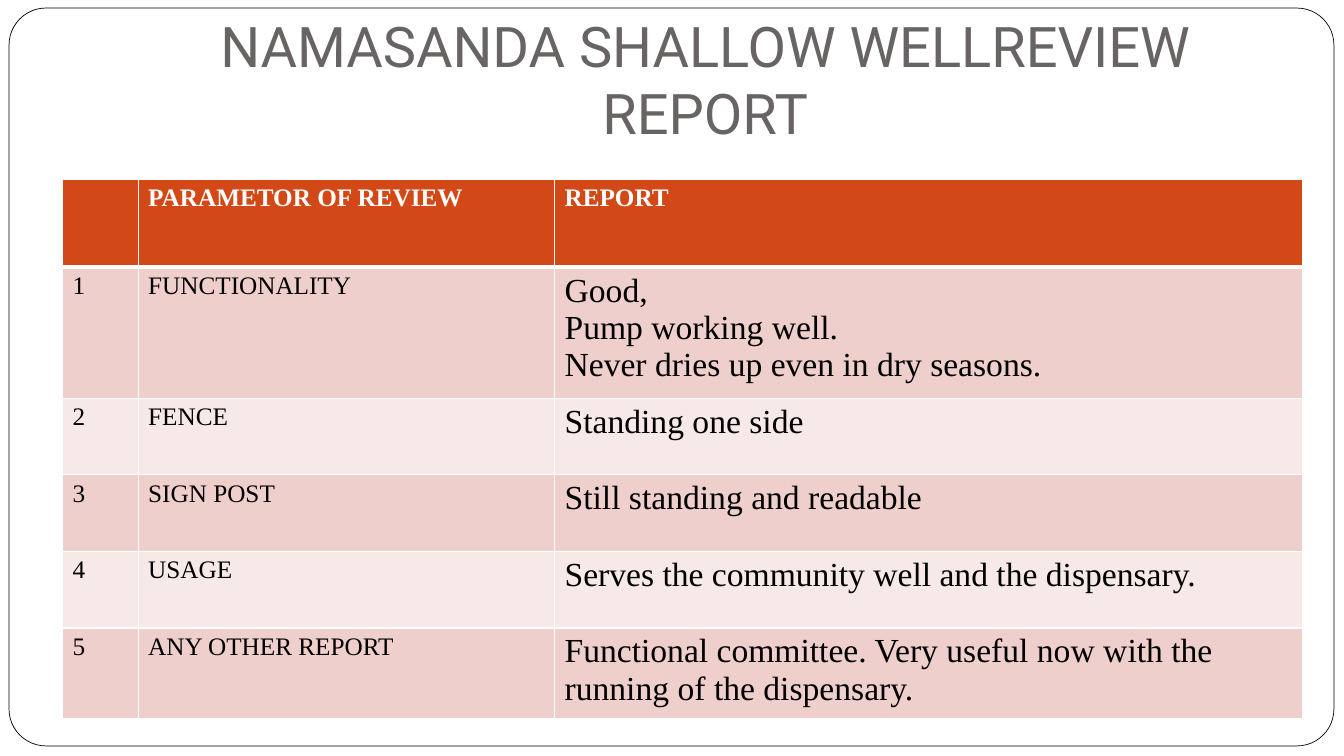
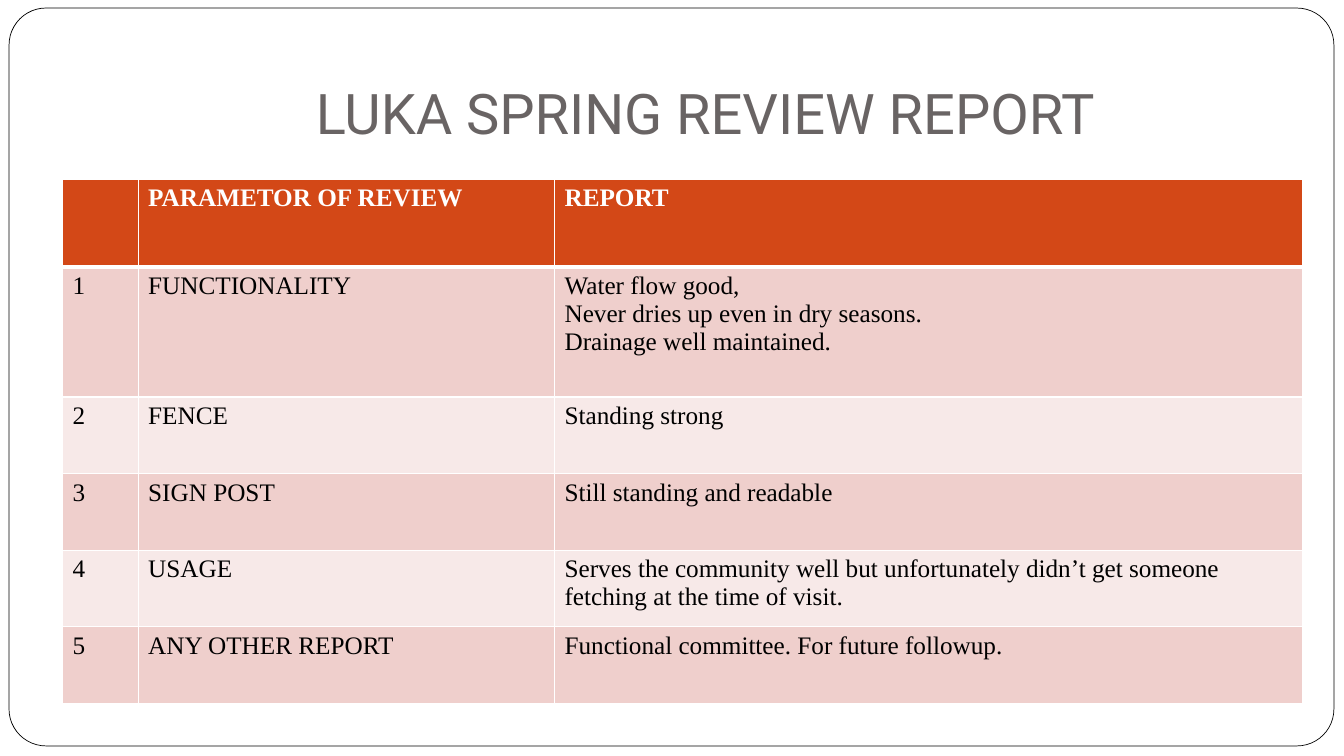
from dataclasses import dataclass

from lxml.etree import SubElement
from pptx import Presentation
from pptx.dml.color import RGBColor
from pptx.enum.shapes import MSO_SHAPE
from pptx.enum.text import MSO_ANCHOR, PP_ALIGN
from pptx.oxml.ns import qn
from pptx.util import Inches, Pt


@dataclass(frozen=True)
class Theme:
    white: str = "FFFFFF"
    black: str = "000000"
    title: str = "696464"
    header: str = "D34817"
    bands: tuple = ("EFCFCC", "F7E9E8")
    title_font: str = "Roboto"
    body_font: str = "Times New Roman"
    title_size: int = 40
    label_size: int = 18
    large_size: int = 24
    grid_line: int = 1
    header_line: int = 3


COLUMNS = (0.75, 4.13, 7.42)
ROWS = (0.87, 1.29, 0.76, 0.76, 0.76, 0.76)
HEADINGS = ("", "PARAMETOR OF REVIEW", "REPORT")
PARAMETERS = ("FUNCTIONALITY", "FENCE", "SIGN POST", "USAGE", "ANY OTHER REPORT")


class Deck:
    def __init__(self, theme):
        self.theme = theme
        self.prs = Presentation()
        self.prs.slide_width = Inches(13.33)
        self.prs.slide_height = Inches(7.5)
        self.s = None

    def add_slide(self):
        self.s = self.prs.slides.add_slide(self.prs.slide_layouts[6])
        self.frame()

    def frame(self):
        """Draw the rounded outline around the slide."""
        sp = self.s.shapes.add_shape(MSO_SHAPE.ROUNDED_RECTANGLE, Inches(0.09),
                                     Inches(0.08), Inches(13.14), Inches(7.32))
        sp.adjustments[0] = 0.05
        sp.shadow.inherit = False
        sp.fill.solid()
        sp.fill.fore_color.rgb = RGBColor.from_string(self.theme.white)
        sp.line.color.rgb = RGBColor.from_string(self.theme.black)
        sp.line.width = Pt(0.5)

    def run(self, p, text, font, size, color, bold=False):
        r = p.add_run()
        r.text = text
        r.font.name = font
        r.font.size = Pt(size)
        r.font.bold = bold
        r.font.color.rgb = RGBColor.from_string(color)

    def title(self, text):
        sp = self.s.shapes.add_textbox(Inches(1.33), Inches(0.3), Inches(11.33), Inches(1.25))
        tf = sp.text_frame
        tf.word_wrap = True
        tf.vertical_anchor = MSO_ANCHOR.BOTTOM
        tf.margin_left = tf.margin_right = tf.margin_bottom = Inches(0.1)
        tf.margin_top = Inches(0.05)
        p = tf.paragraphs[0]
        p.alignment = PP_ALIGN.CENTER
        self.run(p, text, self.theme.title_font, self.theme.title_size, self.theme.title)

    def borders(self, cell, top, bottom):
        """Give a cell white borders; top and bottom are widths in points."""
        tcPr = cell._tc.get_or_add_tcPr()
        side = self.theme.grid_line
        for tag, width in (("lnL", side), ("lnR", side), ("lnT", top), ("lnB", bottom)):
            ln = SubElement(tcPr, qn(f"a:{tag}"), w=str(Pt(width)))
            fill = SubElement(ln, qn("a:solidFill"))
            SubElement(fill, qn("a:srgbClr"), val=self.theme.white)

    def cell(self, cell, row, text, size):
        t = self.theme
        is_header = row == 0
        self.borders(cell, top=t.header_line if row == 1 else t.grid_line,
                     bottom=t.header_line if is_header else t.grid_line)
        cell.fill.solid()
        fill = t.header if is_header else t.bands[(row - 1) % 2]
        cell.fill.fore_color.rgb = RGBColor.from_string(fill)
        if not text:
            return
        tf = cell.text_frame
        for i, line in enumerate(text.split("\n")):
            p = tf.add_paragraph() if i else tf.paragraphs[0]
            self.run(p, line, t.body_font, size, t.white if is_header else t.black, is_header)

    def review_table(self, reports, report_size):
        table = self.s.shapes.add_table(len(ROWS), len(COLUMNS), Inches(0.62), Inches(1.78),
                                        Inches(sum(COLUMNS)), Inches(sum(ROWS))).table
        table.horz_banding = False
        for column, width in zip(table.columns, COLUMNS):
            column.width = Inches(width)
        for row, height in zip(table.rows, ROWS):
            row.height = Inches(height)
        numbers = map(str, range(1, len(PARAMETERS) + 1))
        content = [HEADINGS, *zip(numbers, PARAMETERS, reports)]
        for i, texts in enumerate(content):
            for j, text in enumerate(texts):
                size = report_size if i and j == 2 else self.theme.label_size
                self.cell(table.cell(i, j), i, text, size)


def main():
    theme = Theme()
    deck = Deck(theme)
    reviews = (
        ("NAMASANDA SHALLOW WELLREVIEW REPORT", theme.large_size, (
            "Good,\nPump working well.\nNever dries up even in dry seasons.",
            "Standing one side",
            "Still standing and readable",
            "Serves the community well and the dispensary.",
            "Functional committee. Very useful now with the running of the dispensary.",
        )),
        ("LUKA SPRING REVIEW REPORT", theme.label_size, (
            "Water flow good,\nNever dries up even in dry seasons.\nDrainage well maintained.",
            "Standing strong",
            "Still standing and readable",
            "Serves the community well but unfortunately didn’t get someone "
            "fetching at the time of visit.",
            "Functional committee. For future followup.",
        )),
    )
    for title, report_size, reports in reviews:
        deck.add_slide()
        deck.title(title)
        deck.review_table(reports, report_size)
    deck.prs.save("out.pptx")


if __name__ == "__main__":
    main()
